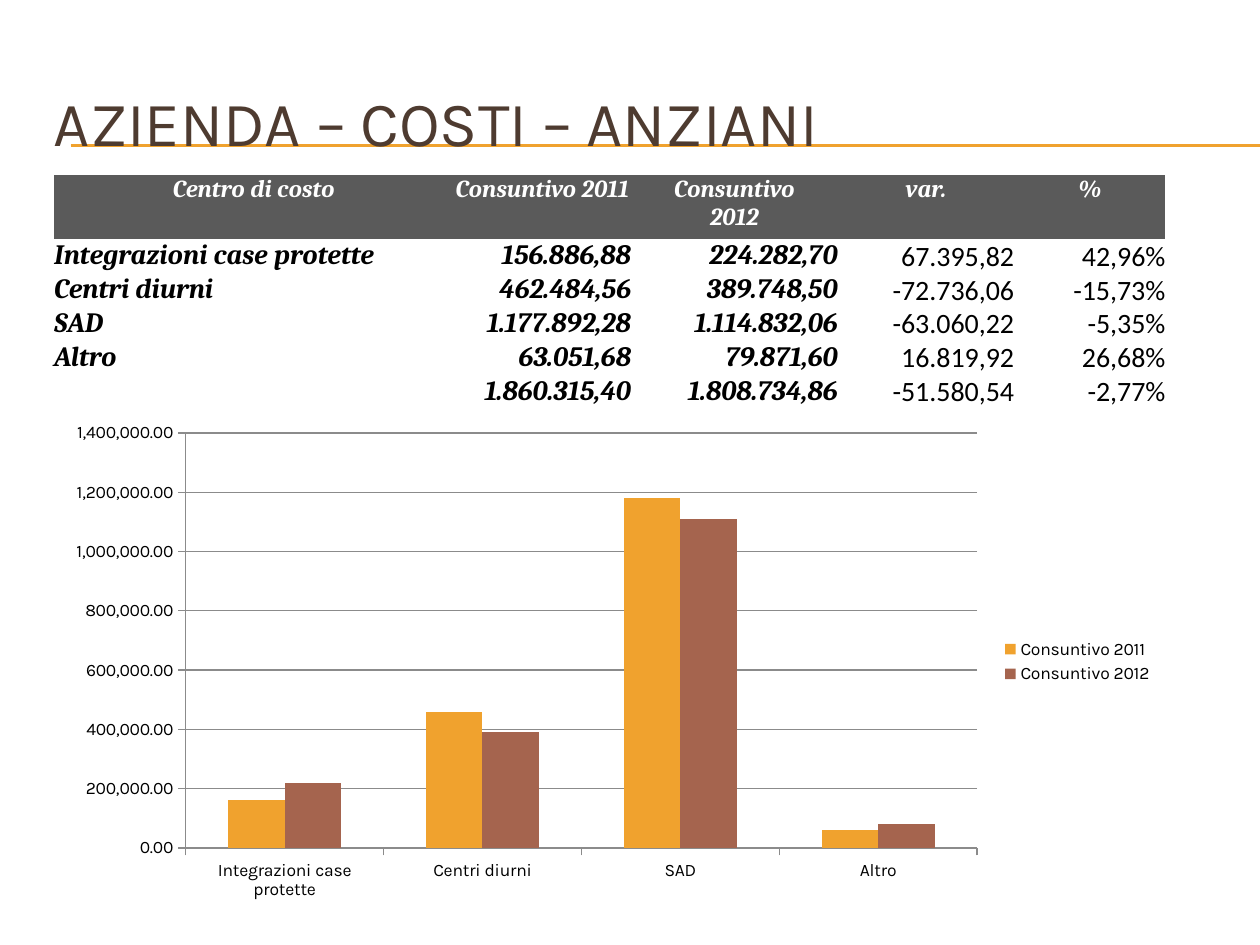
from lxml.etree import Element, SubElement
from pptx import Presentation
from pptx.chart.data import CategoryChartData
from pptx.dml.color import RGBColor
from pptx.enum.chart import XL_CHART_TYPE, XL_LEGEND_POSITION, XL_TICK_MARK
from pptx.enum.text import MSO_ANCHOR, PP_ALIGN
from pptx.oxml.ns import qn
from pptx.util import Inches, Pt

ORANGE, BROWN, GRID = "F0A22E", "A5644E", "8B8B8B"
HEADER = ["Centro di costo", "Consuntivo 2011", "Consuntivo\n2012", "var.", "%"]
ROWS = [
    ["Integrazioni case protette", "156.886,88", "224.282,70", "67.395,82", "42,96%"],
    ["Centri diurni", "462.484,56", "389.748,50", "-72.736,06", "-15,73%"],
    ["SAD", "1.177.892,28", "1.114.832,06", "-63.060,22", "-5,35%"],
    ["Altro", "63.051,68", "79.871,60", "16.819,92", "26,68%"],
    ["", "1.860.315,40", "1.808.734,86", "-51.580,54", "-2,77%"],
]
SERIES = [
    ("Consuntivo 2011", ORANGE, [160000, 460000, 1180000, 60000]),
    ("Consuntivo 2012", BROWN, [220000, 390000, 1110000, 80000]),
]
COLUMN_WIDTHS = [3.17, 1.41, 1.64, 1.4, 1.2]
ROW_HEIGHTS = [0.51] + [0.27] * len(ROWS)


def color(value):
    """Turn a hex string into a colour."""
    return RGBColor.from_string(value)


def style_font(font, name, size, value, bold=False, italic=False):
    """Set the face, size, colour and style of a font."""
    font.name, font.size = name, Pt(size)
    font.bold, font.italic = bold, italic
    font.color.rgb = color(value)


def add_rules(slide, left, top, width):
    """Draw the double rule under the title."""
    for offset in (0, 0.01):
        y = Inches(top + offset)
        rule = slide.shapes.add_connector(1, Inches(left), y, Inches(left + width), y)
        rule.line.color.rgb = color(ORANGE)
        rule.line.width = Pt(0.75)
        SubElement(rule._element.spPr, qn("a:effectLst"))


def add_title(slide, left, top, width, height):
    """Write the slide title."""
    box = slide.shapes.add_textbox(*map(Inches, (left, top, width, height)))
    frame = box.text_frame
    frame.word_wrap = True
    frame.vertical_anchor = MSO_ANCHOR.MIDDLE
    paragraph = frame.paragraphs[0]
    paragraph.text = "AZIENDA – COSTI – ANZIANI"
    style_font(paragraph.font, "Karla", 36, "4E3B30")


def remove_borders(cell):
    """Leave the four sides of a table cell without a line."""
    properties = cell._tc.get_or_add_tcPr()
    for position, side in enumerate(("a:lnL", "a:lnR", "a:lnT", "a:lnB")):
        border = Element(qn(side), w="0")
        SubElement(border, qn("a:noFill"))
        properties.insert(position, border)


def fill_cell(cell, text, row, column):
    """Write one table cell with the style of its row and column."""
    is_header, is_change = row == 0, column > 2
    cell.margin_left = cell.margin_right = cell.margin_top = cell.margin_bottom = 0
    cell.text = text
    if is_header:
        cell.fill.solid()
        cell.fill.fore_color.rgb = color("5A5A5A")
        alignment = PP_ALIGN.CENTER
    else:
        cell.fill.background()
        alignment = PP_ALIGN.RIGHT if column else PP_ALIGN.LEFT
        cell.vertical_anchor = MSO_ANCHOR.BOTTOM if is_change else MSO_ANCHOR.TOP
    remove_borders(cell)
    for paragraph in cell.text_frame.paragraphs:
        paragraph.alignment = alignment
        if is_header:
            style_font(paragraph.font, "Cambria", 14, "FFFFFF", True, True)
        elif is_change:
            style_font(paragraph.font, "Calibri", 16, "000000")
        else:
            style_font(paragraph.font, "Cambria", 16, "000000", True, True)


def add_cost_table(slide, left, top, width, height):
    """Place the table of costs by centre."""
    lines = [HEADER] + ROWS
    box = map(Inches, (left, top, width, height))
    table = slide.shapes.add_table(len(lines), len(HEADER), *box).table
    table.horz_banding = False
    for column, size in zip(table.columns, COLUMN_WIDTHS):
        column.width = Inches(size)
    for row, size in zip(table.rows, ROW_HEIGHTS):
        row.height = Inches(size)
    for row, line in enumerate(lines):
        for column, text in enumerate(line):
            fill_cell(table.cell(row, column), text, row, column)
    first_line = table.cell(0, 2).text_frame.paragraphs[0]
    first_line._p.get_or_add_pPr().set("indent", str(Inches(-0.17)))


def add_cost_chart(slide, left, top, width, height):
    """Place the column chart that compares the two years."""
    data = CategoryChartData(number_format="#,##0.00")
    data.categories = [line[0] for line in ROWS[:-1]]
    for name, _, values in SERIES:
        data.add_series(name, values)
    box = map(Inches, (left, top, width, height))
    chart = slide.shapes.add_chart(XL_CHART_TYPE.COLUMN_CLUSTERED, *box, data).chart
    style_font(chart.font, "Karla", 10, "000000")
    chart.has_title = False
    chart.has_legend = True
    chart.legend.position = XL_LEGEND_POSITION.RIGHT
    chart.legend.include_in_layout = False
    plot = chart.plots[0]
    plot.gap_width, plot.overlap = 150, 0
    plot.vary_by_categories = False
    for series, (_, value, _) in zip(plot.series, SERIES):
        series.format.fill.solid()
        series.format.fill.fore_color.rgb = color(value)
    value_axis = chart.value_axis
    value_axis.minimum_scale, value_axis.maximum_scale = 0, 1400000
    value_axis.major_unit = 200000
    value_axis.has_major_gridlines = True
    value_axis.tick_labels.number_format = "#,##0.00"
    value_axis.tick_labels.number_format_is_linked = False
    for axis in (chart.category_axis, value_axis):
        axis.major_tick_mark = XL_TICK_MARK.OUTSIDE
        axis.format.line.color.rgb = color(GRID)
    value_axis.major_gridlines.format.line.color.rgb = color(GRID)


def main():
    """Build the slide and save it."""
    presentation = Presentation()
    presentation.slide_width, presentation.slide_height = Inches(10), Inches(7.5)
    slide = presentation.slides.add_slide(presentation.slide_layouts[6])
    add_rules(slide, 0.56, 1.15, 9.44)
    add_title(slide, 0.33, 0.5, 9.5, 0.92)
    add_cost_table(slide, 0.43, 1.39, sum(COLUMN_WIDTHS), sum(ROW_HEIGHTS))
    add_cost_chart(slide, 0.43, 3.28, 8.82, 3.94)
    presentation.save("out.pptx")


if __name__ == "__main__":
    main()
